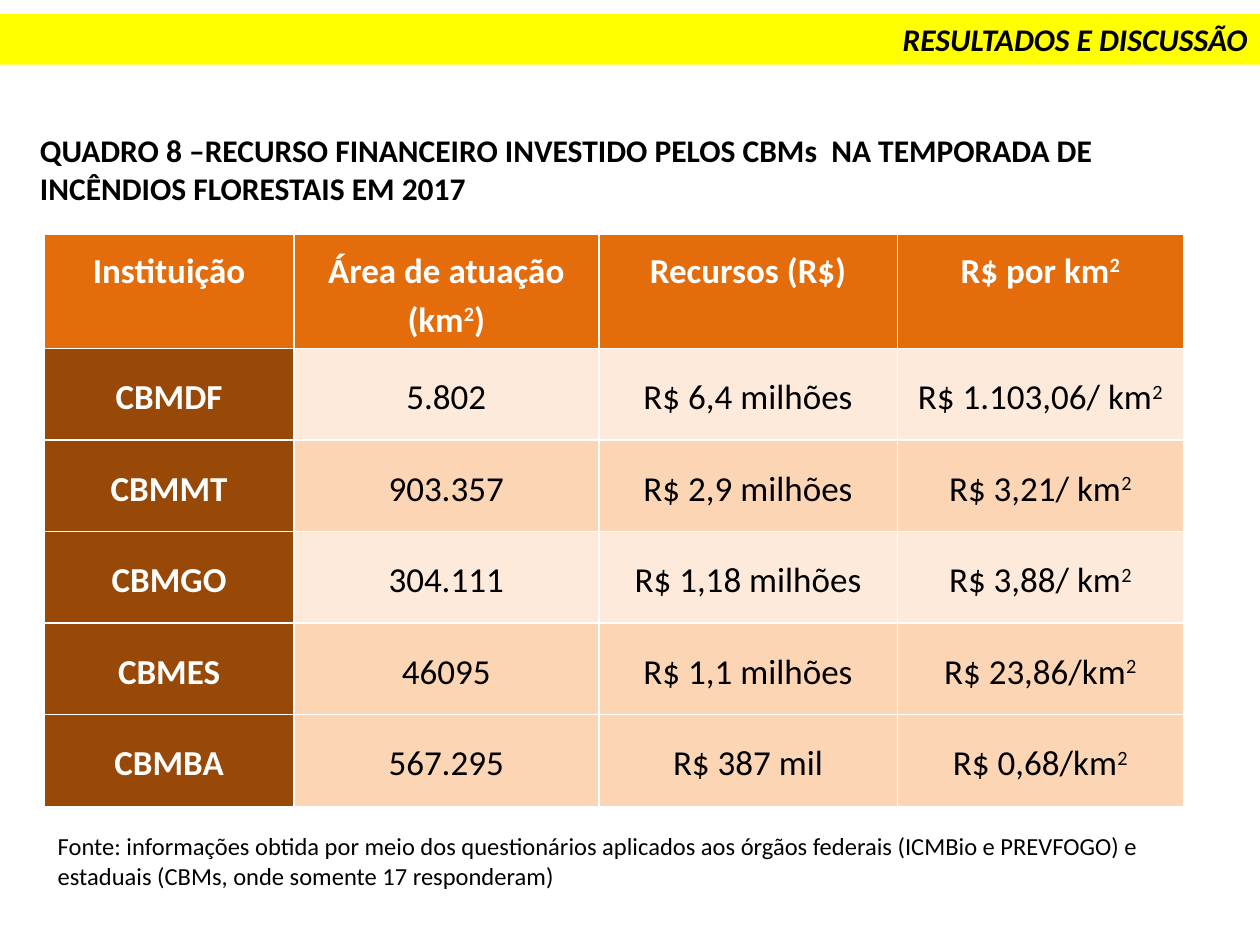
from pptx import Presentation
from pptx.dml.color import RGBColor
from pptx.enum.shapes import MSO_SHAPE
from pptx.enum.text import MSO_ANCHOR, PP_ALIGN
from pptx.util import Pt

BLACK = RGBColor(0x00, 0x00, 0x00)
WHITE = RGBColor(0xFF, 0xFF, 0xFF)
YELLOW = RGBColor(0xFF, 0xFF, 0x00)
ORANGE = RGBColor(0xE4, 0x6C, 0x0A)
BROWN = RGBColor(0x98, 0x48, 0x07)
PALE = RGBColor(0xFD, 0xEA, 0xDA)
PEACH = RGBColor(0xFC, 0xD5, 0xB5)

WIDTHS = [142.5, 174.3, 170.6, 163.4]
HEAD, ROW = 64.5, 52.3
DATA = [
    ["Instituição", "Área de atuação (km²)", "Recursos (R$)", "R$ por km²"],
    ["CBMDF", "5.802", "R$ 6,4 milhões", "R$ 1.103,06/ km²"],
    ["CBMMT", "903.357", "R$ 2,9 milhões", "R$ 3,21/ km²"],
    ["CBMGO", "304.111", "R$ 1,18 milhões", "R$ 3,88/ km²"],
    ["CBMES", "46095", "R$ 1,1 milhões", "R$ 23,86/km²"],
    ["CBMBA", "567.295", "R$ 387 mil", "R$ 0,68/km²"],
]
BANDS = [PALE, PEACH, PALE, PEACH, PEACH]


def style(para, size, color=BLACK, bold=False):
    font = para.font
    font.name, font.size, font.bold = "Calibri", Pt(size), bold
    font.color.rgb = color


def write(para, text):
    """Add the text as runs, with each ² as a raised 2."""
    start, mark, end = text.partition("²")
    para.add_run().text = start
    if mark:
        power = para.add_run()
        power.text = "2"
        power._r.get_or_add_rPr().set("baseline", "30000")
    if end:
        para.add_run().text = end


deck = Presentation()
deck.slide_width, deck.slide_height = Pt(720), Pt(540)
slide = deck.slides.add_slide(deck.slide_layouts[6])

# Section banner
banner = slide.shapes.add_shape(MSO_SHAPE.RECTANGLE, Pt(0), Pt(8), Pt(720), Pt(29))
banner.shadow.inherit = False
banner.fill.solid()
banner.fill.fore_color.rgb = YELLOW
banner.line.fill.background()
banner.text_frame.word_wrap = True
para = banner.text_frame.paragraphs[0]
para.text = "RESULTADOS E DISCUSSÃO"
para.alignment = PP_ALIGN.RIGHT
style(para, 18, bold=True)
para.font.italic = True

# Table title and source note
NOTES = [
    (15.8, 71.3, 689, 51, 18, True,
     "QUADRO 8 –RECURSO FINANCEIRO INVESTIDO PELOS CBMs  NA TEMPORADA DE "
     "INCÊNDIOS FLORESTAIS EM 2017"),
    (25.9, 471.6, 651, 41, 14, False,
     "Fonte: informações obtida por meio dos questionários aplicados aos órgãos "
     "federais (ICMBio e PREVFOGO) e estaduais (CBMs, onde somente 17 responderam)"),
]
for left, top, wide, high, size, bold, text in NOTES:
    frame = slide.shapes.add_textbox(Pt(left), Pt(top), Pt(wide), Pt(high)).text_frame
    frame.word_wrap = True
    para = frame.paragraphs[0]
    para.text = text
    style(para, size, bold=bold)

# Table of funds by institution
table = slide.shapes.add_table(
    len(DATA), len(WIDTHS), Pt(25.4), Pt(134),
    Pt(sum(WIDTHS)), Pt(HEAD + ROW * len(BANDS))).table
for col, wide in zip(table.columns, WIDTHS):
    col.width = Pt(wide)
for i, (row, texts) in enumerate(zip(table.rows, DATA)):
    row.height = Pt(ROW if i else HEAD)
    for j, (cell, text) in enumerate(zip(row.cells, texts)):
        label = i == 0 or j == 0
        cell.fill.solid()
        cell.fill.fore_color.rgb = ORANGE if i == 0 else BROWN if j == 0 else BANDS[i - 1]
        cell.margin_left = cell.margin_right = Pt(5)
        cell.margin_top = cell.margin_bottom = Pt(5)
        cell.vertical_anchor = MSO_ANCHOR.MIDDLE if i else MSO_ANCHOR.TOP
        para = cell.text_frame.paragraphs[0]
        write(para, text)
        para.alignment = PP_ALIGN.CENTER
        para.line_spacing = 1.15
        style(para, 20, WHITE if label else BLACK, label)

deck.save("out.pptx")
